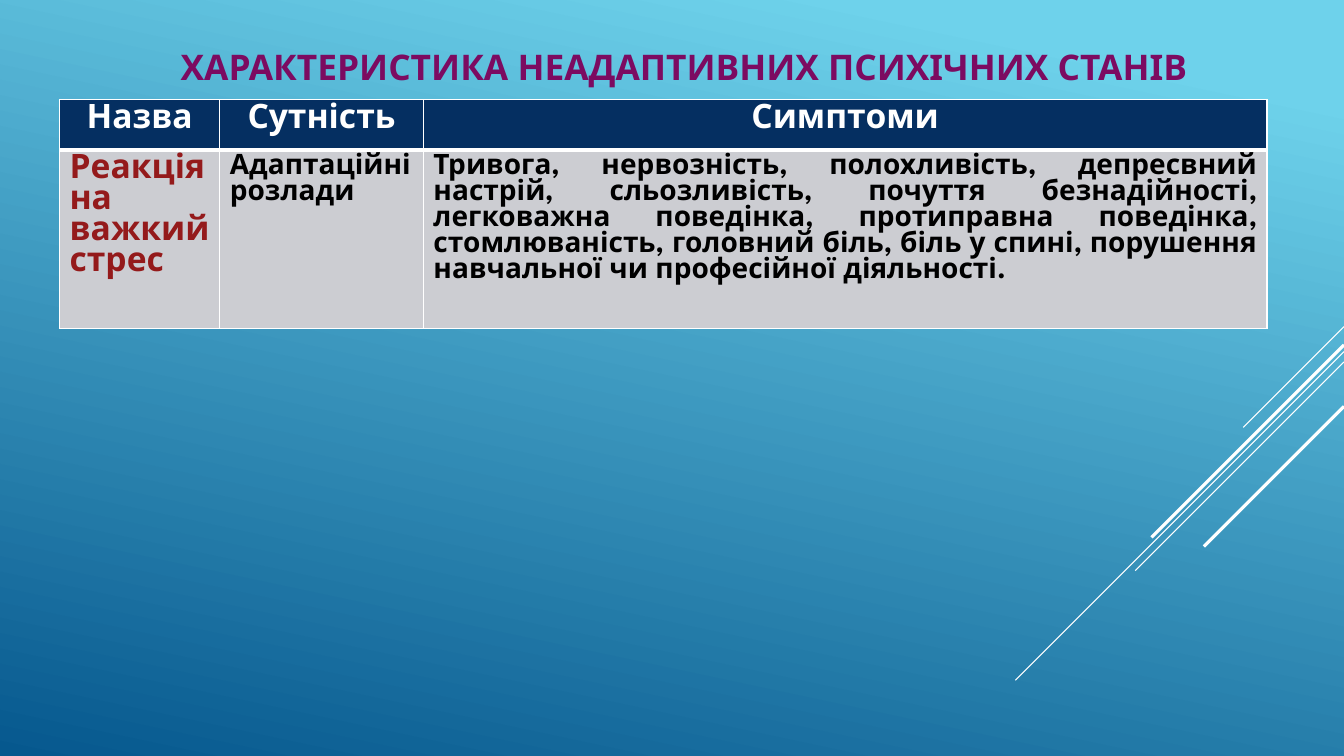
from lxml import etree
from pptx import Presentation
from pptx.dml.color import RGBColor
from pptx.enum.shapes import MSO_CONNECTOR
from pptx.enum.text import MSO_ANCHOR, PP_ALIGN
from pptx.oxml.ns import qn
from pptx.util import Cm, Pt

STRAIGHT = MSO_CONNECTOR.STRAIGHT
MIDDLE = MSO_ANCHOR.MIDDLE
CENTER, JUSTIFY = PP_ALIGN.CENTER, PP_ALIGN.JUSTIFY

# Content
TITLE = "ХАРАКТЕРИСТИКА НЕАДАПТИВНИХ ПСИХІЧНИХ СТАНІВ"
HEADERS = ("Назва", "Сутність", "Симптоми")
STATE = (
    "Реакція на важкий стрес",
    "Адаптаційні розлади",
    "Тривога, нервозність, полохливість, депресвний настрій, сльозливість, "
    "почуття безнадійності, легковажна поведінка, протиправна поведінка, "
    "стомлюваність, головний біль, біль у спині, порушення навчальної чи "
    "професійної діяльності.",
)

THEME = {
    "font": "League Spartan",
    "sky": "6ED2EB", "deep": "06588E", "white": "FFFFFF",
    "title": "7C0B61", "header": "052F61", "body": "CCCDD2",
    "name": "941A1B", "text": "000000",
    "title_size": 25.2, "large": 24, "small": 20,
    "thin": 0.75, "thick": 2.25, "border": 1, "header_border": 3,
}

# Layout in centimetres
WIDTH, HEIGHT = 33.87, 19.05
TITLE_BOX = (3.96, 0.84, 26.57, 1.65)
TABLE_LEFT, TABLE_TOP = 1.5, 2.51
COLUMNS = (4.04, 5.13, 21.26)
ROWS = (1.04, 3.53)
# Diagonals: height at the right edge, horizontal run, weight
DIAGONALS = (
    (8.23, 2.54, "thin"),
    (8.86, 8.28, "thin"),
    (9.12, 5.26, "thin"),
    (8.69, 4.85, "thick"),
    (10.24, 3.53, "thick"),
)


def color(name):
    return RGBColor.from_string(THEME[name])


def write(frame, text, size, ink, align):
    frame.word_wrap = True
    para = frame.paragraphs[0]
    para.alignment = align
    span = para.add_run()
    span.text = text
    span.font.name = THEME["font"]
    span.font.size = Pt(THEME[size])
    span.font.bold = True
    span.font.color.rgb = color(ink)


def add_borders(cell, bottom):
    properties = cell._tc.get_or_add_tcPr()
    for side in "LRTB":
        weight = THEME[bottom if side == "B" else "border"]
        line = etree.SubElement(properties, qn(f"a:ln{side}"), w=str(Pt(weight)))
        fill = etree.SubElement(line, qn("a:solidFill"))
        etree.SubElement(fill, qn("a:srgbClr"), val=THEME["white"])


def fill_cell(cell, text, fill, bottom="border", **text_format):
    add_borders(cell, bottom)
    cell.fill.solid()
    cell.fill.fore_color.rgb = color(fill)
    write(cell.text_frame, text, **text_format)


def add_background(page):
    fill = page.background.fill
    fill.gradient()
    fill.gradient_angle = 360 - 102
    for stop, position, name in zip(fill.gradient_stops, (0.1, 1), ("sky", "deep")):
        stop.position = position
        stop.color.rgb = color(name)


def add_diagonals(page):
    for top, run, weight in DIAGONALS:
        line = page.shapes.add_connector(
            STRAIGHT, Cm(WIDTH), Cm(top), Cm(WIDTH - run), Cm(top + run))
        line.line.color.rgb = color("white")
        line.line.width = Pt(THEME[weight])
        etree.SubElement(line._element.spPr, qn("a:effectLst"))


def add_title(page):
    box = page.shapes.add_textbox(*map(Cm, TITLE_BOX))
    box.text_frame.vertical_anchor = MIDDLE
    write(box.text_frame, TITLE, size="title_size", ink="title", align=CENTER)


def add_states_table(page):
    table = page.shapes.add_table(
        len(ROWS), len(COLUMNS), Cm(TABLE_LEFT), Cm(TABLE_TOP),
        Cm(sum(COLUMNS)), Cm(sum(ROWS))).table
    for row, height in zip(table.rows, ROWS):
        row.height = Cm(height)
    for index, width in enumerate(COLUMNS):
        table.columns[index].width = Cm(width)
        fill_cell(table.cell(0, index), HEADERS[index], "header",
                  bottom="header_border", size="large", ink="white", align=CENTER)
        is_name = index == 0
        fill_cell(table.cell(1, index), STATE[index], "body",
                  size="large" if is_name else "small",
                  ink="name" if is_name else "text", align=JUSTIFY)


def main():
    deck = Presentation()
    deck.slide_width, deck.slide_height = Cm(WIDTH), Cm(HEIGHT)
    page = deck.slides.add_slide(deck.slide_layouts[6])
    add_background(page)
    add_diagonals(page)
    add_title(page)
    add_states_table(page)
    deck.save("out.pptx")


if __name__ == "__main__":
    main()
